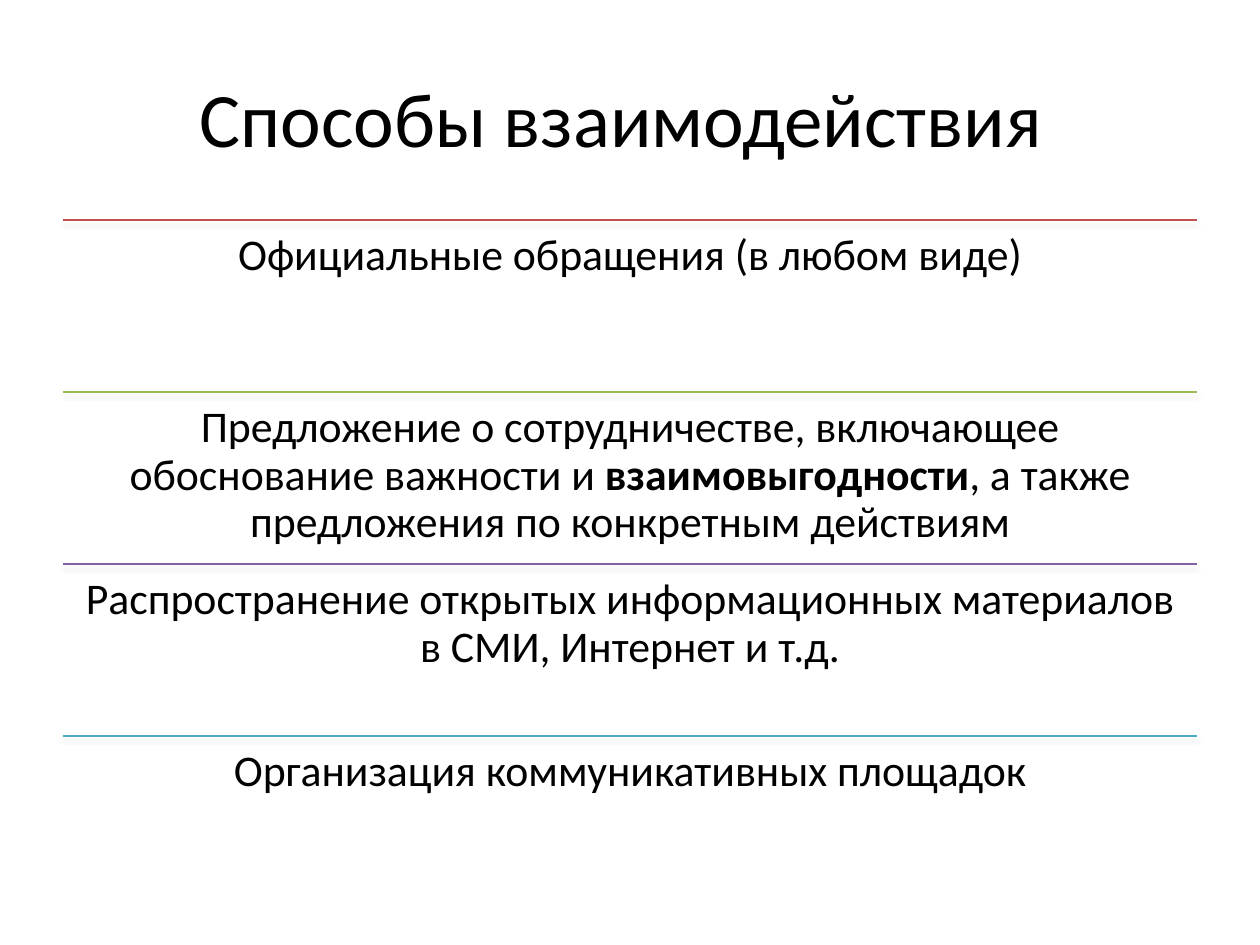
from dataclasses import dataclass

from lxml.etree import SubElement
from pptx import Presentation
from pptx.dml.color import RGBColor
from pptx.enum.shapes import MSO_CONNECTOR as Connector
from pptx.enum.text import MSO_ANCHOR as Anchor, PP_ALIGN as Align
from pptx.oxml.ns import qn
from pptx.util import Emu, Pt

BLACK = RGBColor(0x00, 0x00, 0x00)
WHITE = RGBColor(0xFF, 0xFF, 0xFF)
RED = RGBColor(0xC0, 0x50, 0x4D)
GREEN = RGBColor(0x9B, 0xBB, 0x59)
PURPLE = RGBColor(0x80, 0x64, 0xA2)
TEAL = RGBColor(0x4B, 0xAC, 0xC6)

PX_PER_INCH = 126
LEFT, WIDTH = 63, 1134
TOP, PITCH = 220, 172
INSET = 13


@dataclass(frozen=True)
class Run:
    text: str
    bold: bool = False


@dataclass(frozen=True)
class Row:
    color: RGBColor
    runs: tuple[Run, ...]


ROWS = (
    Row(RED, (Run("Официальные обращения (в любом виде)"),)),
    Row(GREEN, (
        Run("Предложение о сотрудничестве, включающее обоснование важности и "),
        Run("взаимовыгодности", bold=True),
        Run(", а также предложения по конкретным действиям"),
    )),
    Row(PURPLE, (
        Run("Распространение открытых информационных материалов в СМИ, Интернет и т.д."),
    )),
    Row(TEAL, (Run("Организация коммуникативных площадок"),)),
)


def px(n: int) -> Emu:
    return Emu(round(n * 914400 / PX_PER_INCH))


def set_attrs(obj, values: dict) -> None:
    for name, value in values.items():
        setattr(obj, name, value)


def place(sp, left: int, top: int, width: int, height: int) -> None:
    set_attrs(sp, {"left": px(left), "top": px(top),
                   "width": px(width), "height": px(height)})


def add_run(p, run: Run, size: int) -> None:
    r = p.add_run()
    r.text = run.text
    set_attrs(r.font, {"name": "Calibri", "size": Pt(size), "bold": run.bold})
    r.font.color.rgb = BLACK


def add_title(s, text: str) -> None:
    sp = s.shapes.title
    place(sp, LEFT, 38, WIDTH, 157)
    tf = sp.text_frame
    set_attrs(tf, {"word_wrap": True, "vertical_anchor": Anchor.MIDDLE})
    p = tf.paragraphs[0]
    p.alignment = Align.CENTER
    add_run(p, Run(text), 44)


def add_rule(s, top: int, color: RGBColor) -> None:
    sp = s.shapes.add_connector(
        Connector.STRAIGHT, px(LEFT), px(top), px(LEFT + WIDTH), px(top))
    sp.line.color.rgb = color
    sp.line.width = Pt(0.75)
    effects = SubElement(sp._element.spPr, qn("a:effectLst"))
    shadow = SubElement(effects, qn("a:outerShdw"), blurRad="40000",
                        dist="23000", dir="5400000", rotWithShape="0")
    shade = SubElement(shadow, qn("a:srgbClr"), val=str(BLACK))
    SubElement(shade, qn("a:alpha"), val="35000")


def add_row(s, top: int, row: Row) -> None:
    add_rule(s, top, row.color)
    sp = s.shapes.add_textbox(px(LEFT), px(top), px(WIDTH), px(PITCH))
    tf = sp.text_frame
    set_attrs(tf, {"word_wrap": True, "vertical_anchor": Anchor.TOP,
                   "margin_left": px(INSET), "margin_right": px(INSET),
                   "margin_top": px(INSET), "margin_bottom": px(INSET)})
    p = tf.paragraphs[0]
    set_attrs(p, {"alignment": Align.CENTER, "line_spacing": 0.9})
    for run in row.runs:
        add_run(p, run, 25)


def main() -> None:
    prs = Presentation()
    set_attrs(prs, {"slide_width": px(1260), "slide_height": px(945)})
    s = prs.slides.add_slide(prs.slide_layouts.get_by_name("Title Only"))
    s.background.fill.solid()
    s.background.fill.fore_color.rgb = WHITE
    add_title(s, "Способы взаимодействия ")
    for i, row in enumerate(ROWS):
        add_row(s, TOP + i * PITCH, row)
    prs.save("out.pptx")


if __name__ == "__main__":
    main()
